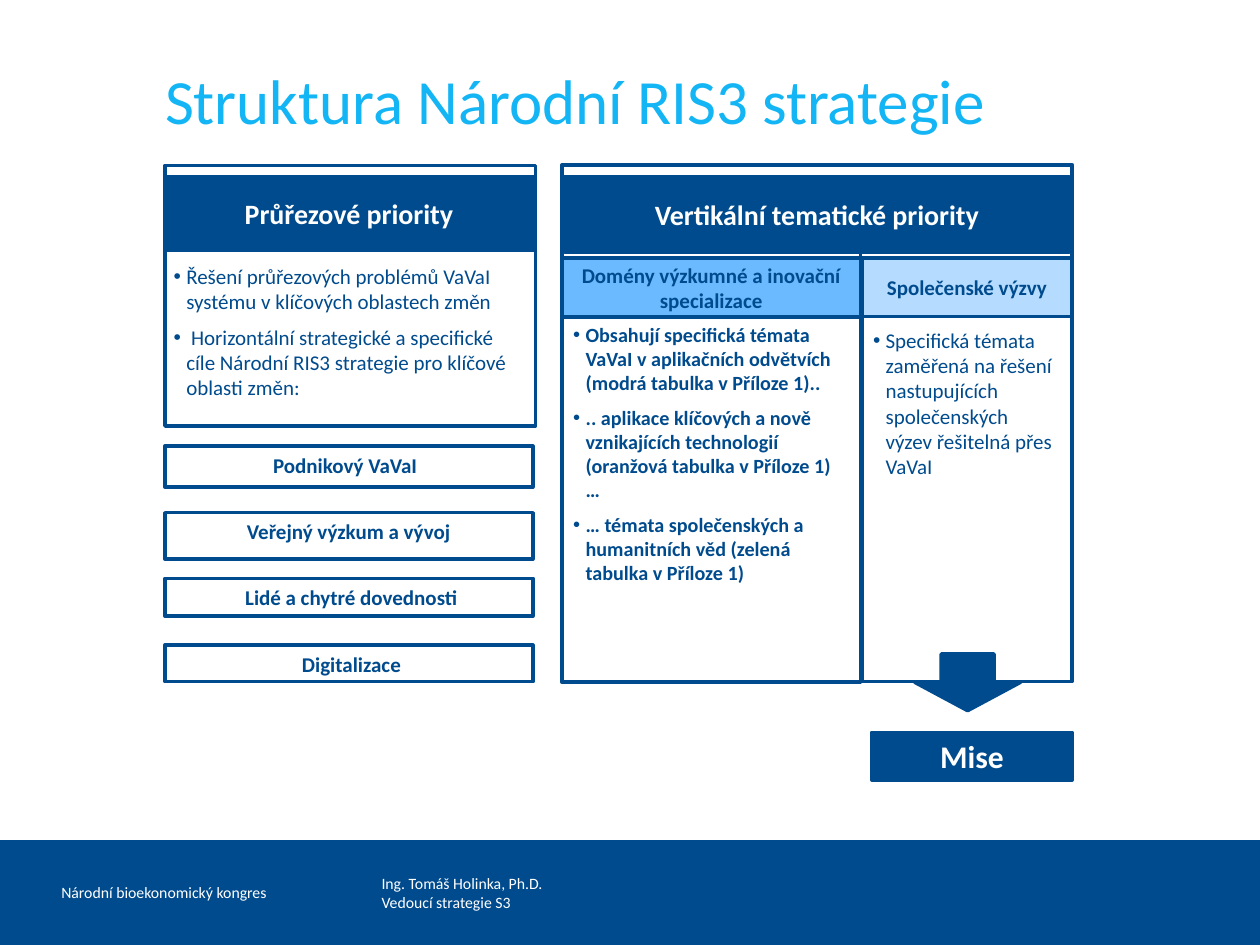
from lxml.etree import SubElement
from pptx import Presentation
from pptx.dml.color import RGBColor
from pptx.enum.shapes import MSO_SHAPE
from pptx.enum.text import MSO_ANCHOR, PP_ALIGN
from pptx.oxml.ns import qn
from pptx.util import Pt

FONT = "Calibri"
COLORS = {
    "navy": "004B8D",
    "sky": "13B5F4",
    "blue": "6BBAFF",
    "pale": "B5DCFF",
    "white": "FFFFFF",
}


def color(name):
    return RGBColor.from_string(COLORS[name])


def write(shape, lines, size, ink, bold=False, align=PP_ALIGN.LEFT, after=0):
    """Fill the shape with one formatted paragraph per line."""
    frame = shape.text_frame
    frame.text = "\n".join(lines)
    for para in frame.paragraphs:
        para.alignment = align
        para.space_after = Pt(after)
        for span in para.runs:
            span.font.name = FONT
            span.font.size = Pt(size)
            span.font.bold = bold
            span.font.color.rgb = color(ink)


def add_box(page, place, fill=None, line="navy", kind=MSO_SHAPE.RECTANGLE):
    box = page.shapes.add_shape(kind, *map(Pt, place))
    box.shadow.inherit = False
    if fill:
        box.fill.solid()
        box.fill.fore_color.rgb = color(fill)
    else:
        box.fill.background()
    if line:
        box.line.color.rgb = color(line)
        box.line.width = Pt(2)
    else:
        box.line.fill.background()
    return box


def add_heading(page, place, text, size, fill="navy", ink="white", after=6):
    box = add_box(page, place, fill)
    box.text_frame.word_wrap = True
    box.text_frame.vertical_anchor = MSO_ANCHOR.MIDDLE
    write(box, [text], size, ink, True, PP_ALIGN.CENTER, after)


def add_text(page, place, lines, size, ink, bold=False, wrap=True, after=0):
    box = page.shapes.add_textbox(*map(Pt, place))
    box.text_frame.word_wrap = wrap
    write(box, lines, size, ink, bold, after=after)
    return box


def add_flush_text(page, place, lines, size, ink, anchor=MSO_ANCHOR.MIDDLE):
    frame = add_text(page, place, lines, size, ink).text_frame
    frame.margin_left = frame.margin_right = 0
    frame.margin_top = frame.margin_bottom = 0
    frame.vertical_anchor = anchor


def add_bullets(page, place, lines, size, bold=False, after=6):
    box = add_text(page, place, lines, size, "navy", bold, after=after)
    for para in box.text_frame.paragraphs:
        properties = para._p.get_or_add_pPr()
        properties.set("marL", str(Pt(7.2)))
        properties.set("indent", str(-Pt(7.2)))
        SubElement(properties, qn("a:buFont"), typeface="Arial")
        SubElement(properties, qn("a:buChar"), char="•")


def add_footer(page):
    add_flush_text(page, (218, 480, 142, 60),
                   ["Ing. Tomáš Holinka, Ph.D.", "Vedoucí strategie S3"], 9, "white")
    add_flush_text(page, (35, 480, 148, 60), ["Národní bioekonomický kongres"], 9, "white")


def add_cross_cutting(page):
    left, width = 94.3, 210.2
    add_box(page, (left, 94.5, 211.7, 149))
    add_heading(page, (left, 100.8, width, 42.5), "Průřezové priority", 16)
    add_bullets(page, (92.2, 146.9, 211.7, 85.7), [
        "Řešení průřezových problémů VaVaI systému v klíčových oblastech změn",
        " Horizontální strategické a specifické cíle Národní RIS3 strategie "
        "pro klíčové oblasti změn:",
    ], 12)

    # Key areas of change: box top and height, label left and width
    areas = [
        ("Podnikový VaVaI", 254.9, 23.5, 149, 98),
        ("Veřejný výzkum a vývoj", 293, 26.6, 134, 132),
        ("Lidé a chytré dovednosti", 330.5, 21.6, 133, 137.5),
        ("Digitalizace", 368.6, 21, 165.5, 72),
    ]
    for label, top, height, label_left, label_width in areas:
        add_box(page, (left, top, width, height))
        add_text(page, (label_left, top, label_width, 21.8), [label], 12, "navy", True, False)


def add_vertical(page):
    left, width = 321.1, 170.6
    side, side_width = 492.8, 119.5
    add_box(page, (left, 94.2, 291.6, 295.3))
    add_heading(page, (322.5, 100.8, 288.7, 43.5), "Vertikální tematické priority", 16)

    # Column frames and their headings
    add_box(page, (left, 143.3, width, 246.6))
    add_box(page, (side, 166.3, side_width, 223.2))
    add_heading(page, (left, 147.5, width, 33.6),
                "Domény výzkumné a inovační specializace", 12, "blue", "navy")
    add_heading(page, (side, 147.5, side_width, 33.4), "Společenské výzvy", 12, "pale", "navy")

    # Column contents
    add_bullets(page, (320.4, 180.7, width, 158.4), [
        "Obsahují specifická témata VaVaI v aplikačních odvětvích "
        "(modrá tabulka v Příloze 1)..",
        ".. aplikace klíčových a nově vznikajících technologií "
        "(oranžová tabulka v Příloze 1) …",
        "… témata společenských a humanitních věd (zelená tabulka v Příloze 1)",
    ], 11.5, True)
    add_bullets(page, (491.8, 183.6, 117.4, 94.3), [
        "Specifická témata zaměřená na řešení nastupujících společenských výzev "
        "řešitelná přes VaVaI",
    ], 12, after=0)


def main():
    deck = Presentation()
    deck.slide_width, deck.slide_height = Pt(720), Pt(540)
    page = deck.slides.add_slide(deck.slide_layouts[6])

    # Navy page with a white content area
    page.background.fill.solid()
    page.background.fill.fore_color.rgb = color("navy")
    add_box(page, (0, 0, 720, 480), "white", None)
    add_footer(page)

    # Priorities
    add_cross_cutting(page)
    add_vertical(page)

    # Mission below the societal challenges
    add_heading(page, (498.2, 418.5, 114.5, 27.2), "Mise", 18, after=0)
    add_box(page, (522.7, 373.7, 60.5, 32.4), "navy", kind=MSO_SHAPE.DOWN_ARROW)

    # Title
    add_flush_text(page, (94.3, 35.3, 589.7, 44), ["Struktura Národní RIS3 strategie"],
                   36, "sky", MSO_ANCHOR.TOP)
    deck.save("out.pptx")


if __name__ == "__main__":
    main()
